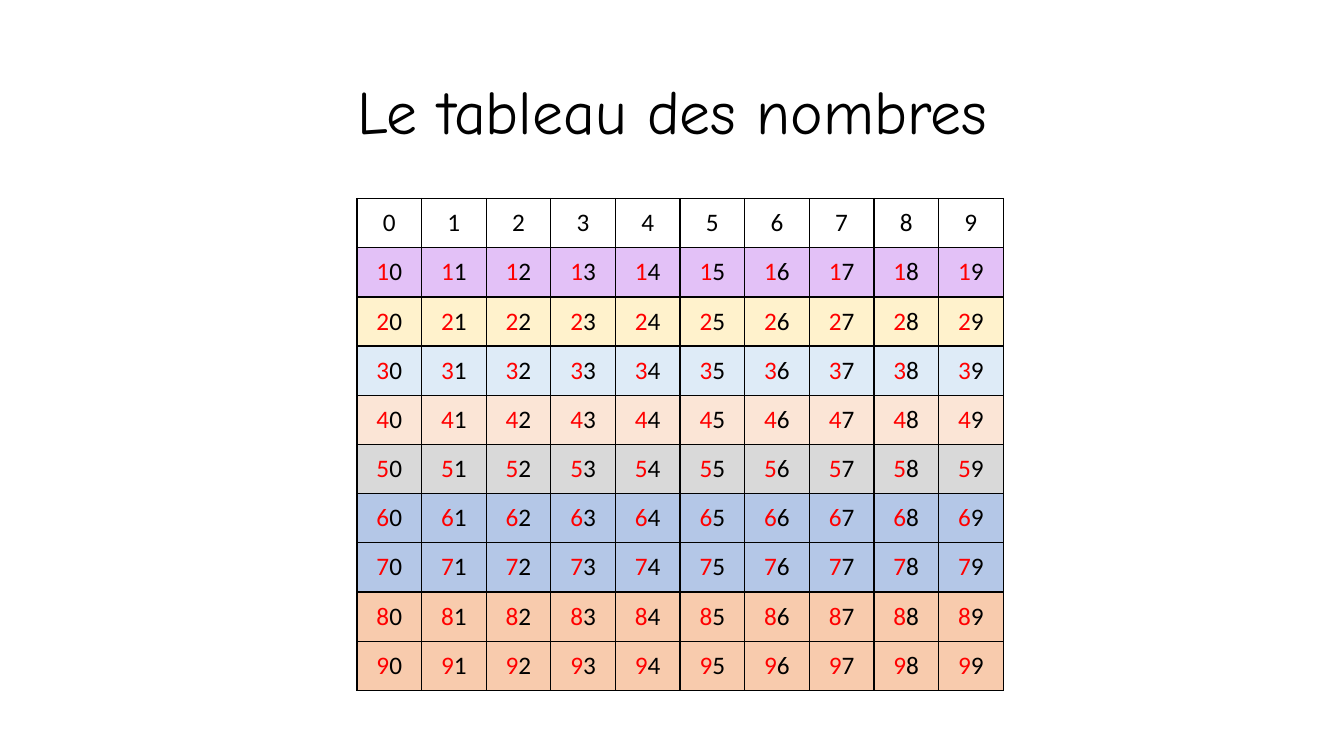
import pptx
import pptx.dml.color
import pptx.enum.text
import pptx.oxml
import pptx.oxml.ns
import pptx.util

COLORS = {
    "ink": "000000",
    "tens": "FF0000",
    "white": "FFFFFF",
    "violet": "E3C1F7",
    "cream": "FFF2CC",
    "sky": "DEEBF7",
    "peach": "FBE5D6",
    "grey": "D9D9D9",
    "blue": "B4C7E7",
    "orange": "F8CBAD",
}
# One fill per row of ten; the seventies and nineties share their neighbour's
ROW_FILLS = ["white", "violet", "cream", "sky", "peach", "grey",
             "blue", "blue", "orange", "orange"]
GRID = 10
INCH = pptx.util.Inches


def rgb(name):
    return pptx.dml.color.RGBColor.from_string(COLORS[name])


def add_borders(cell):
    for side in ("lnL", "lnR", "lnT", "lnB"):
        cell._tc.get_or_add_tcPr().append(pptx.oxml.parse_xml(
            f'<a:{side} {pptx.oxml.ns.nsdecls("a")} w="{pptx.util.Pt(1)}">'
            f'<a:solidFill><a:srgbClr val="{COLORS["ink"]}"/></a:solidFill>'
            f'</a:{side}>'))


presentation = pptx.Presentation()
presentation.slide_width = INCH(13.33)
presentation.slide_height = INCH(7.5)
slide = presentation.slides.add_slide(presentation.slide_layouts[5])

# Title
title = slide.shapes.title
title.left, title.top = INCH(0.92), INCH(0.41)
title.width, title.height = INCH(11.5), INCH(1.45)
title.text_frame.text = "Le tableau des nombres"
title.text_frame.vertical_anchor = pptx.enum.text.MSO_ANCHOR.MIDDLE
heading = title.text_frame.paragraphs[0]
heading.alignment = pptx.enum.text.PP_ALIGN.CENTER
heading.line_spacing = 0.9
heading.font.name = "Comic Neue"
heading.font.size = pptx.util.Pt(44)
heading.font.color.rgb = rgb("ink")

# Number table: rows are tens, columns are units
numbers = slide.shapes.add_table(
    GRID, GRID, INCH(3.54), INCH(1.97), INCH(6.41), INCH(4.88)).table
numbers.first_row = False
numbers.horz_banding = False

for tens, fill in enumerate(ROW_FILLS):
    for units in range(GRID):
        cell = numbers.cell(tens, units)
        cell.vertical_anchor = pptx.enum.text.MSO_ANCHOR.MIDDLE
        add_borders(cell)
        cell.fill.solid()
        cell.fill.fore_color.rgb = rgb(fill)

        number = cell.text_frame.paragraphs[0]
        number.alignment = pptx.enum.text.PP_ALIGN.CENTER
        number.font.name = "Calibri"
        number.font.size = pptx.util.Pt(18)
        digits = [(units, "ink")]
        if tens:
            digits.insert(0, (tens, "tens"))
        for digit, color in digits:
            run = number.add_run()
            run.text = str(digit)
            run.font.color.rgb = rgb(color)

presentation.save("out.pptx")
